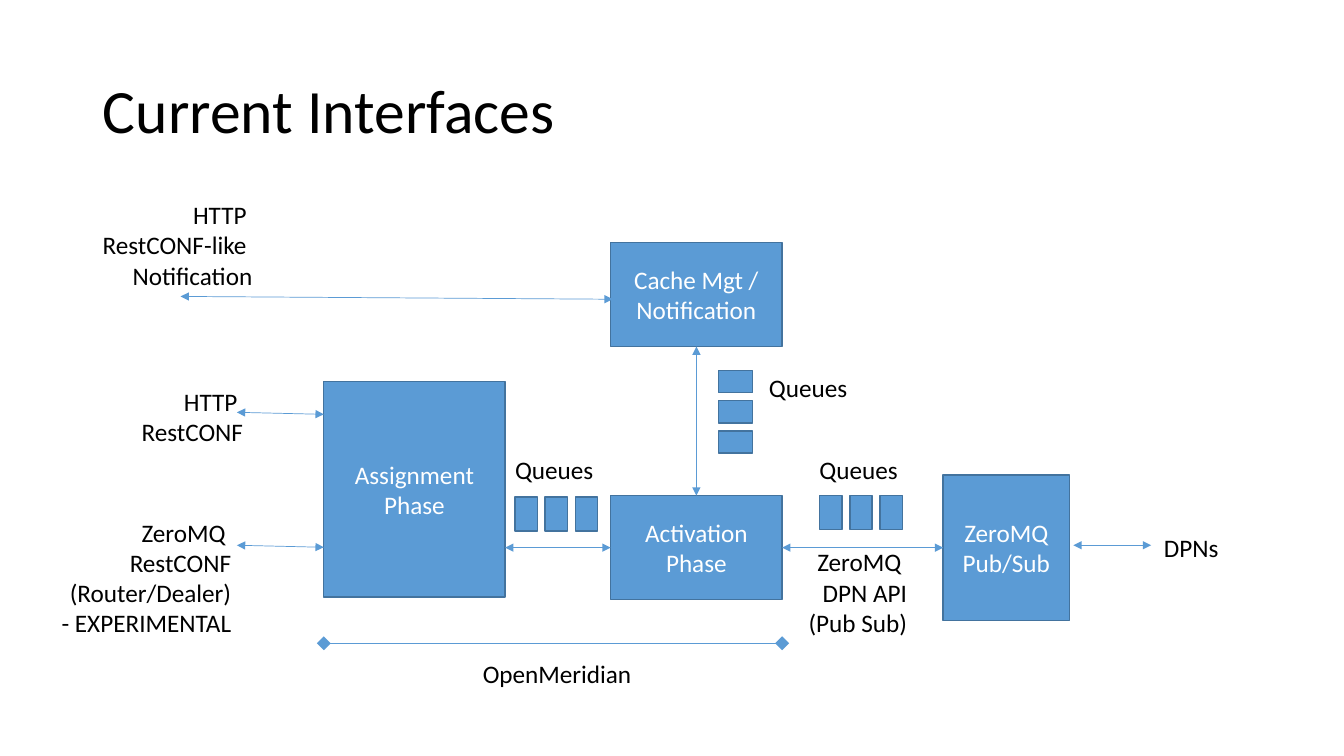
from lxml import etree
from pptx import Presentation
from pptx.dml.color import RGBColor
from pptx.enum.shapes import MSO_CONNECTOR, MSO_SHAPE
from pptx.enum.text import MSO_ANCHOR, MSO_AUTO_SIZE, PP_ALIGN
from pptx.oxml.ns import qn
from pptx.util import Cm, Pt

FONT = "Calibri"
BLACK = RGBColor(0x00, 0x00, 0x00)
WHITE = RGBColor(0xFF, 0xFF, 0xFF)
BLUE = RGBColor(0x5B, 0x9B, 0xD5)
OUTLINE = RGBColor(0x43, 0x73, 0x9E)
TOP, LEFT, BOTTOM, RIGHT = range(4)

# All lengths are in centimetres: left, top, width, height.
TITLE = ("Current Interfaces", (2.34, 1.02, 29.21, 3.68))
BOXES = {
    "Assignment Phase": (8.16, 9.61, 4.57, 5.44),
    "Activation Phase": (15.39, 12.49, 4.32, 2.62),
    "Cache Mgt / Notification": (15.39, 6.11, 4.32, 2.62),
    "ZeroMQ Pub/Sub": (23.77, 11.97, 3.18, 3.66),
}
LABELS = [
    (["HTTP ", "RestCONF-like ", "Notification"], (2.29, 4.9, 4.32, 2.57), PP_ALIGN.RIGHT),
    (["HTTP ", "RestCONF"], (3.28, 9.6, 3.1, 1.8), PP_ALIGN.RIGHT),
    (["ZeroMQ ", "RestCONF", "(Router/Dealer)", "- EXPERIMENTAL"],
     (1.25, 12.9, 4.83, 3.33), PP_ALIGN.RIGHT),
    (["ZeroMQ ", "DPN API", "(Pub Sub)"], (20.09, 13.65, 3.02, 2.57), PP_ALIGN.RIGHT),
    (["DPNs"], (29.08, 13.28, 1.9, 1.02), PP_ALIGN.LEFT),
    (["OpenMeridian"], (11.54, 16.46, 5, 1.02), PP_ALIGN.CENTER),
    (["Queues"], (19.13, 9.25, 2.51, 1.02), PP_ALIGN.LEFT),
    (["Queues"], (20.4, 11.33, 2.51, 1.02), PP_ALIGN.LEFT),
    (["Queues"], (12.73, 11.33, 2.51, 1.02), PP_ALIGN.LEFT),
]
# Each end is a point, or a box name with one of its sides; then tip and tip size.
LINKS = [
    ((4.55, 7.47), (15.44, 7.54), "triangle", "med"),
    ((5.97, 10.39), (8.16, 10.44), "triangle", "med"),
    ((5.97, 13.74), (8.16, 13.79), "triangle", "med"),
    ((12.73, 13.8), ("Activation Phase", LEFT), "triangle", "med"),
    (("Activation Phase", RIGHT), ("ZeroMQ Pub/Sub", LEFT), "triangle", "med"),
    (("Activation Phase", TOP), ("Cache Mgt / Notification", BOTTOM), "triangle", "med"),
    ((27.05, 13.74), (29.01, 13.74), "triangle", "med"),
    ((8.16, 16.21), (19.71, 16.21), "diamond", "lg"),
]
# Left and top of the first cell, and whether the queue runs downwards.
QUEUES = [(12.98, 12.52, False), (20.66, 12.48, False), (18.11, 9.34, True)]
CELL_SHORT, CELL_LONG, CELL_STEP, CELL_COUNT = 0.56, 0.86, 0.76, 3


def cms(values):
    return [Cm(v) for v in values]


def style(p, size, color, align):
    p.font.name, p.font.size, p.font.color.rgb = FONT, Pt(size), color
    p.alignment = align


def add_box(shapes, frame, text=""):
    s = shapes.add_shape(MSO_SHAPE.RECTANGLE, *cms(frame))
    s.shadow.inherit = False
    s.fill.solid()
    s.fill.fore_color.rgb = BLUE
    s.line.color.rgb = OUTLINE
    s.line.width = Pt(1)
    if text:
        tf = s.text_frame
        tf.text = text
        tf.vertical_anchor = MSO_ANCHOR.MIDDLE
        style(tf.paragraphs[0], 18, WHITE, PP_ALIGN.CENTER)
    return s


def add_label(shapes, lines, frame, align):
    tf = shapes.add_textbox(*cms(frame)).text_frame
    tf.word_wrap = False
    tf.auto_size = MSO_AUTO_SIZE.SHAPE_TO_FIT_TEXT
    tf.text = "\n".join(lines)
    for p in tf.paragraphs:
        style(p, 18, BLACK, align)


def add_link(shapes, boxes, start, end, tip, tip_size):
    points = [(0, 0) if e[0] in boxes else e for e in (start, end)]
    c = shapes.add_connector(MSO_CONNECTOR.STRAIGHT, *cms(points[0] + points[1]))
    for e, join in ((start, c.begin_connect), (end, c.end_connect)):
        if e[0] in boxes:
            join(boxes[e[0]], e[1])
    c.line.color.rgb = BLUE
    c.line.width = Pt(0.5)
    ln = c.line._get_or_add_ln()
    for tag in ("a:headEnd", "a:tailEnd"):
        etree.SubElement(ln, qn(tag), type=tip, w=tip_size, len=tip_size)
    etree.SubElement(c._element.spPr, qn("a:effectLst"))


def add_queue(shapes, left, top, downwards):
    for i in range(CELL_COUNT):
        shift = i * CELL_STEP
        if downwards:
            add_box(shapes, (left, top + shift, CELL_LONG, CELL_SHORT))
        else:
            add_box(shapes, (left + shift, top, CELL_SHORT, CELL_LONG))


def add_title(title, text, frame):
    title.left, title.top, title.width, title.height = cms(frame)
    tf = title.text_frame
    tf.text = text
    tf.vertical_anchor = MSO_ANCHOR.MIDDLE
    p = tf.paragraphs[0]
    style(p, 44, BLACK, PP_ALIGN.LEFT)
    p.line_spacing = 0.9


def main():
    prs = Presentation()
    prs.slide_width, prs.slide_height = Cm(33.87), Cm(19.05)
    shapes = prs.slides.add_slide(prs.slide_layouts[5]).shapes
    add_title(shapes.title, *TITLE)
    boxes = {name: add_box(shapes, frame, name) for name, frame in BOXES.items()}
    for link in LINKS:
        add_link(shapes, boxes, *link)
    for label in LABELS:
        add_label(shapes, *label)
    for queue in QUEUES:
        add_queue(shapes, *queue)
    prs.save("out.pptx")


if __name__ == "__main__":
    main()
